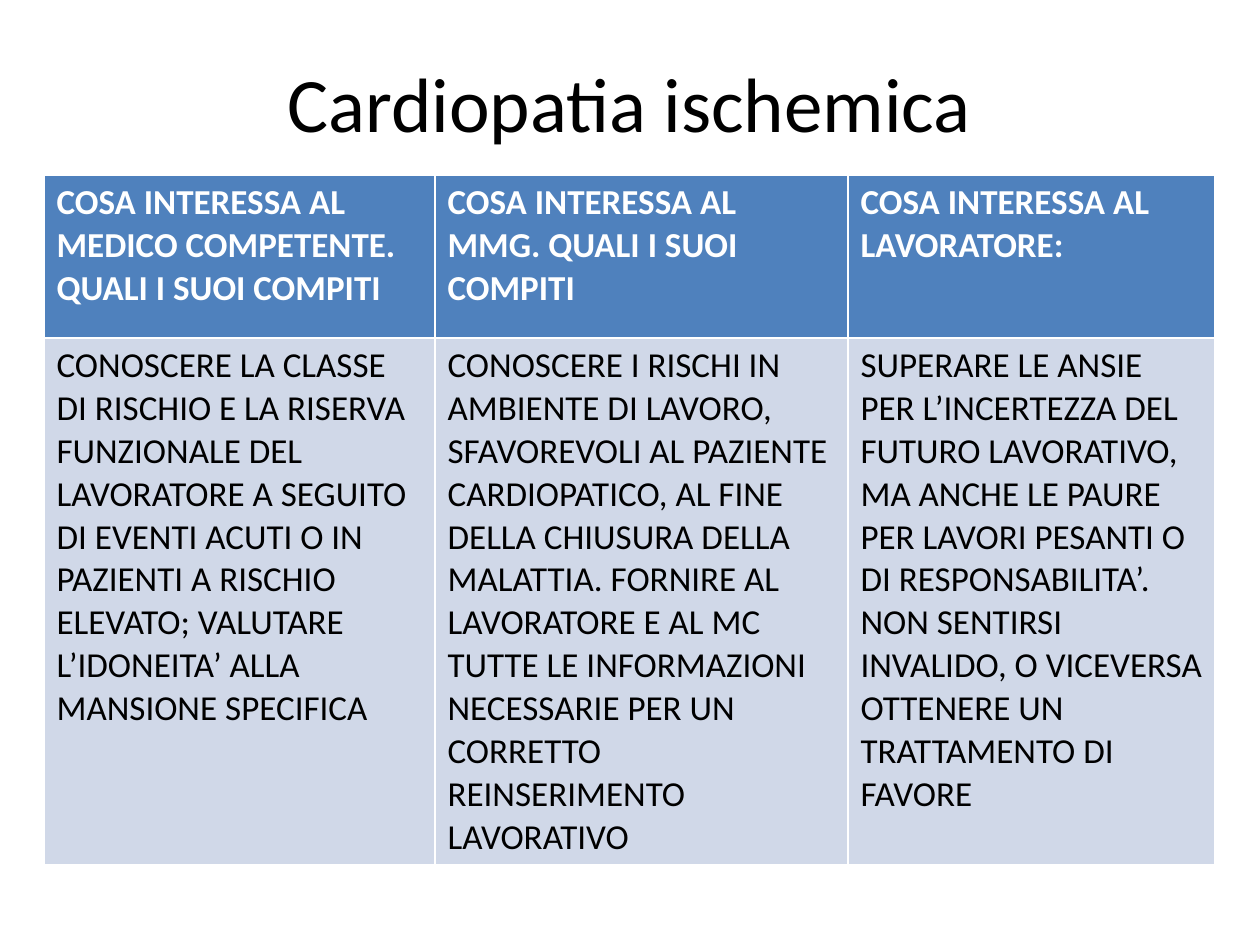
from pptx import Presentation
from pptx.dml.color import RGBColor
from pptx.enum.text import MSO_ANCHOR, PP_ALIGN
from pptx.util import Emu, Pt

PX = 914400 / 126
FONT = "Calibri"
HEADINGS = [
    "COSA INTERESSA AL MEDICO COMPETENTE. QUALI I SUOI COMPITI",
    "COSA INTERESSA AL MMG. QUALI I SUOI COMPITI",
    "COSA INTERESSA AL LAVORATORE:",
]
DUTIES = [
    "CONOSCERE LA CLASSE DI RISCHIO E LA RISERVA FUNZIONALE DEL LAVORATORE "
    "A SEGUITO DI EVENTI ACUTI O IN PAZIENTI A RISCHIO ELEVATO; VALUTARE "
    "L’IDONEITA’ ALLA MANSIONE SPECIFICA",
    "CONOSCERE I RISCHI IN AMBIENTE DI LAVORO, SFAVOREVOLI AL PAZIENTE "
    "CARDIOPATICO, AL FINE DELLA CHIUSURA DELLA MALATTIA. FORNIRE AL "
    "LAVORATORE E AL MC TUTTE LE INFORMAZIONI NECESSARIE PER UN CORRETTO "
    "REINSERIMENTO LAVORATIVO",
    "SUPERARE LE ANSIE PER L’INCERTEZZA DEL FUTURO LAVORATIVO, MA ANCHE LE "
    "PAURE PER LAVORI PESANTI O DI RESPONSABILITA’. NON SENTIRSI INVALIDO, "
    "O VICEVERSA OTTENERE UN TRATTAMENTO DI FAVORE",
]


def px(length):
    return Emu(round(length * PX))


def color(hex_string):
    return RGBColor.from_string(hex_string)


def write(frame, text, size, ink, bold=False):
    frame.text = text
    font = frame.paragraphs[0].runs[0].font
    font.name, font.size, font.bold = FONT, Pt(size), bold
    font.color.rgb = color(ink)


def place_title(slide, left, top, width, height):
    title = slide.shapes.title
    title.left, title.top = px(left), px(top)
    title.width, title.height = px(width), px(height)
    write(title.text_frame, "Cardiopatia ischemica", 44, "000000")
    title.text_frame.vertical_anchor = MSO_ANCHOR.MIDDLE
    title.text_frame.paragraphs[0].alignment = PP_ALIGN.CENTER


def place_roles(slide, left, top, widths, heights):
    roles = slide.shapes.add_table(
        len(heights), len(widths), px(left), px(top),
        px(sum(widths)), px(sum(heights)),
    ).table
    for column, width in zip(roles.columns, widths):
        column.width = px(width)
    for row, height in zip(roles.rows, heights):
        row.height = px(height)
    looks = [(HEADINGS, "4F81BD", "FFFFFF", True), (DUTIES, "D0D8E8", "000000", False)]
    for row, (texts, background, ink, bold) in zip(roles.rows, looks):
        for cell, text in zip(row.cells, texts):
            cell.fill.solid()
            cell.fill.fore_color.rgb = color(background)
            write(cell.text_frame, text, 20, ink, bold)


def main():
    deck = Presentation()
    deck.slide_width, deck.slide_height = px(1260), px(945)
    slide = deck.slides.add_slide(deck.slide_layouts[5])
    place_title(slide, 64, 37, 1131, 129)
    place_roles(slide, 44, 175, [391, 413, 367], [163, 521])
    deck.save("out.pptx")


if __name__ == "__main__":
    main()
